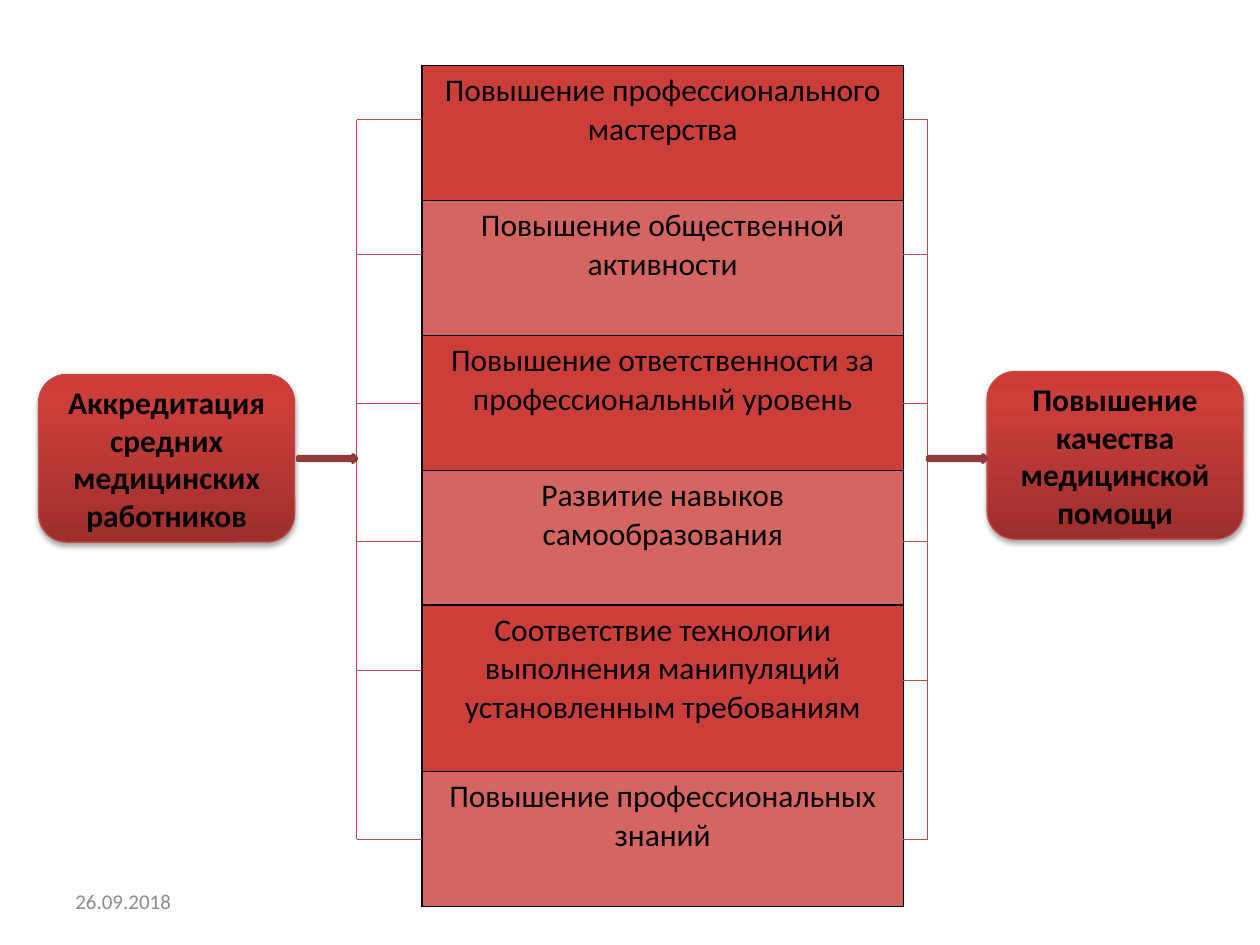
from copy import deepcopy
from dataclasses import dataclass

from lxml import etree
from pptx import Presentation
from pptx.dml.color import RGBColor
from pptx.enum.shapes import MSO_CONNECTOR, MSO_SHAPE
from pptx.enum.text import MSO_ANCHOR, PP_ALIGN
from pptx.oxml import parse_xml
from pptx.oxml.ns import nsdecls, qn
from pptx.util import Cm, Pt

BLACK = RGBColor(0x00, 0x00, 0x00)
GRAY = RGBColor(0x8C, 0x8C, 0x8C)
RED = RGBColor(0xCB, 0x3E, 0x3A)
LIGHT_RED = RGBColor(0xD5, 0x65, 0x61)
LINE_RED = RGBColor(0xBF, 0x4C, 0x48)
ARROW_RED = RGBColor(0xC0, 0x50, 0x4D)
ARROW_EDGE = RGBColor(0x8E, 0x3B, 0x39)
DARK_RED = RGBColor(0x9C, 0x2F, 0x2D)
BRIGHT_RED = RGBColor(0xCE, 0x3B, 0x37)
GRADIENT = [(0, DARK_RED), (0.8, RED), (1, BRIGHT_RED)]

BOX = MSO_SHAPE.FLOWCHART_ALTERNATE_PROCESS
ARROW = MSO_SHAPE.RIGHT_ARROW
STRAIGHT = MSO_CONNECTOR.STRAIGHT
CENTER, LEFT = PP_ALIGN.CENTER, PP_ALIGN.LEFT
MIDDLE = MSO_ANCHOR.MIDDLE

TABLE_LEFT, TABLE_TOP, TABLE_WIDTH = 8.51, 1.32, 9.7
TABLE_RIGHT = TABLE_LEFT + TABLE_WIDTH


@dataclass
class Goal:
    text: str
    height: float = 2.72


@dataclass
class Box:
    text: str
    left: float
    top: float


@dataclass
class Bracket:
    spine: float
    edge: float
    levels: list[float]


GOALS = [
    Goal("Повышение профессионального мастерства"),
    Goal("Повышение общественной активности"),
    Goal("Повышение ответственности за профессиональный уровень"),
    Goal("Развитие навыков самообразования"),
    Goal("Соответствие технологии выполнения манипуляций установленным требованиям", 3.35),
    Goal("Повышение профессиональных знаний"),
]
BOXES = [
    Box("Аккредитация средних медицинских работников", 0.78, 7.55),
    Box("Повышение качества медицинской помощи", 19.9, 7.49),
]
BRACKETS = [
    Bracket(7.19, TABLE_LEFT, [2.41, 5.13, 8.13, 10.92, 13.52, 16.92]),
    Bracket(18.7, TABLE_RIGHT, [2.41, 5.13, 8.13, 10.92, 13.72, 16.92]),
]
ARROW_LEFTS = [6.0, 18.7]


def write(tf, text: str, size: int = 18, color: RGBColor = BLACK,
          bold: bool = False, align: PP_ALIGN = CENTER) -> None:
    tf.word_wrap = True
    p = tf.paragraphs[0]
    p.alignment = align
    r = p.add_run()
    r.text = text
    r.font.name = "Calibri"
    r.font.size = Pt(size)
    r.font.bold = bold
    r.font.color.rgb = color


def add_borders(cell) -> None:
    tc_pr = cell._tc.get_or_add_tcPr()
    for i, side in enumerate(("lnL", "lnR", "lnT", "lnB")):
        tc_pr.insert(i, parse_xml(
            f'<a:{side} {nsdecls("a")} w="12700"><a:solidFill>'
            f'<a:srgbClr val="{BLACK}"/></a:solidFill></a:{side}>'))


def add_goals(slide, goals: list[Goal]) -> None:
    height = sum(g.height for g in goals)
    table = slide.shapes.add_table(len(goals), 1, Cm(TABLE_LEFT), Cm(TABLE_TOP),
                                   Cm(TABLE_WIDTH), Cm(height)).table
    table.first_row = False
    table.horz_banding = False
    for i, goal in enumerate(goals):
        table.rows[i].height = Cm(goal.height)
        cell = table.cell(i, 0)
        cell.fill.solid()
        cell.fill.fore_color.rgb = LIGHT_RED if i % 2 else RED
        add_borders(cell)
        write(cell.text_frame, goal.text)


def add_box(slide, box: Box) -> None:
    sp = slide.shapes.add_shape(BOX, Cm(box.left), Cm(box.top), Cm(5.16), Cm(3.38))
    sp.fill.gradient()
    sp.fill.gradient_angle = 90
    stops = sp._element.spPr.find(".//" + qn("a:gsLst"))
    stops.append(deepcopy(stops[0]))
    for stop, (position, color) in zip(sp.fill.gradient_stops, GRADIENT):
        stop.position = position
        stop.color.rgb = color
    sp.line.color.rgb = LINE_RED
    sp.line.width = Pt(0.75)
    sp.shadow.inherit = False
    sp._element.spPr.find(qn("a:effectLst")).append(parse_xml(
        f'<a:outerShdw {nsdecls("a")} blurRad="{Pt(3.1)}" dist="{Pt(1.8)}" '
        f'dir="5400000" rotWithShape="0"><a:srgbClr val="{BLACK}">'
        '<a:alpha val="35000"/></a:srgbClr></a:outerShdw>'))
    sp.text_frame.vertical_anchor = MIDDLE
    write(sp.text_frame, box.text, bold=True)


def add_line(slide, x1: float, y1: float, x2: float, y2: float) -> None:
    line = slide.shapes.add_connector(STRAIGHT, Cm(x1), Cm(y1), Cm(x2), Cm(y2))
    line.line.color.rgb = LINE_RED
    line.line.width = Pt(0.75)
    etree.SubElement(line._element.spPr, qn("a:effectLst"))


def add_bracket(slide, b: Bracket) -> None:
    add_line(slide, b.spine, b.levels[0], b.spine, b.levels[-1])
    for y in b.levels:
        add_line(slide, b.spine, y, b.edge, y)


def add_arrow(slide, left: float) -> None:
    sp = slide.shapes.add_shape(ARROW, Cm(left), Cm(9.17), Cm(1.19), Cm(0.15))
    sp.shadow.inherit = False
    sp.fill.solid()
    sp.fill.fore_color.rgb = ARROW_RED
    sp.line.color.rgb = ARROW_EDGE
    sp.line.width = Pt(2)


def add_date(slide, text: str) -> None:
    tf = slide.shapes.add_textbox(Cm(1.27), Cm(17.65), Cm(5.92), Cm(1.02)).text_frame
    tf.vertical_anchor = MIDDLE
    write(tf, text, size=12, color=GRAY, align=LEFT)


def main() -> None:
    prs = Presentation()
    prs.slide_width, prs.slide_height = Cm(25.4), Cm(19.05)
    s = prs.slides.add_slide(prs.slide_layouts[6])
    add_goals(s, GOALS)
    add_date(s, "26.09.2018")
    for box in BOXES:
        add_box(s, box)
    for bracket in BRACKETS:
        add_bracket(s, bracket)
    for left in ARROW_LEFTS:
        add_arrow(s, left)
    prs.save("out.pptx")


if __name__ == "__main__":
    main()
